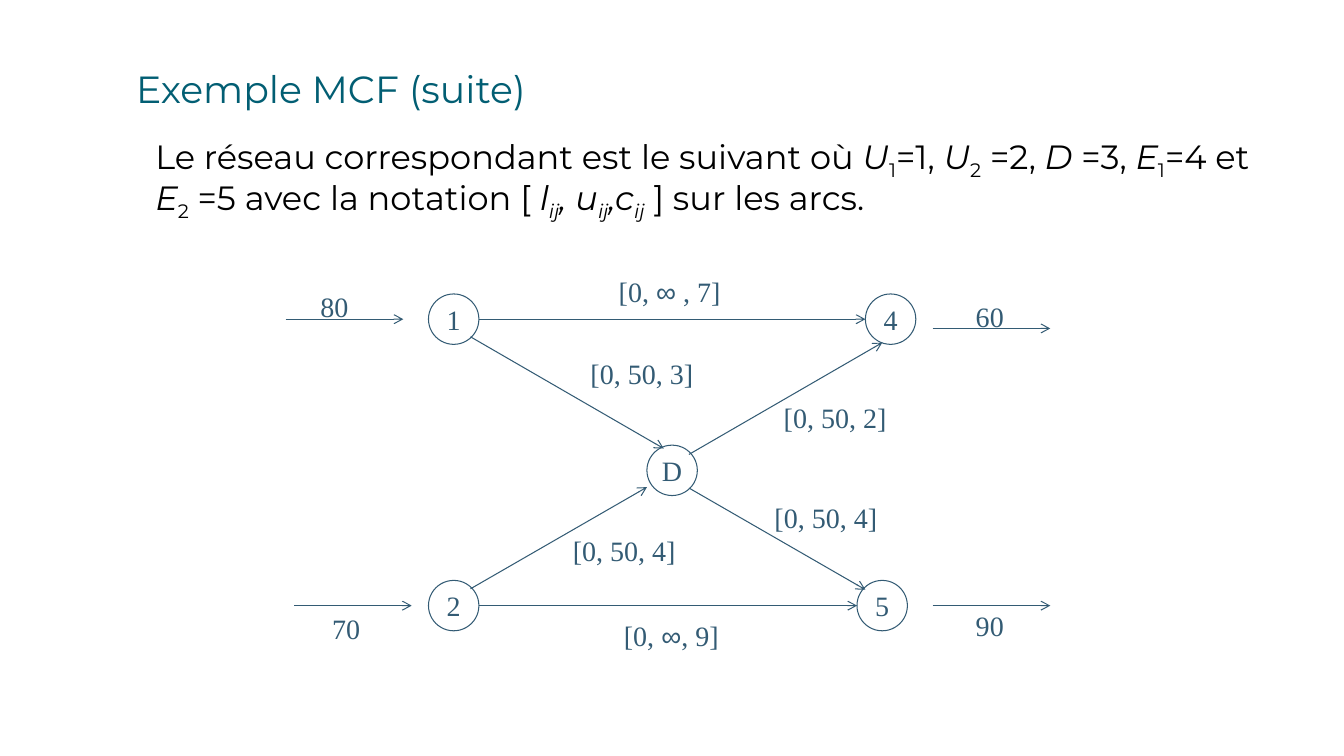
from lxml.etree import SubElement
from pptx import Presentation
from pptx.dml.color import RGBColor
from pptx.enum.shapes import MSO_CONNECTOR, MSO_SHAPE
from pptx.enum.text import MSO_ANCHOR, MSO_AUTO_SIZE, PP_ALIGN
from pptx.oxml.ns import qn
from pptx.util import Inches, Pt

TEAL = RGBColor(0x02, 0x5E, 0x73)
BLACK = RGBColor(0, 0, 0)
SLATE = RGBColor(0x33, 0x5B, 0x74)

# Content: "_" marks subscript, "i" marks italic
TITLE = "Exemple MCF (suite)"
SENTENCE = [
    ("Le réseau correspondant est le suivant où ", ""),
    ("U", "i"), ("1", "_"), ("=1, ", ""), ("U", "i"), ("2", "_"), (" =2, ", ""),
    ("D", "i"), (" =3, ", ""), ("E", "i"), ("1", "_"), ("=4 et ", ""),
    ("E", "i"), ("2", "_"), (" =5 avec la notation [ ", ""),
    ("l", "i"), ("ij", "i_"), (", u", "i"), ("ij", "i_"), (",c", "i"), ("ij", "i_"),
    (" ] sur les arcs.", ""),
]

# Network on a grid of twelfths of an inch: (column, row)
CELL = 1 / 12
RADIUS = 3
TOP, MIDDLE, BOTTOM = 38, 56, 72.1
NODES = {"1": (54, TOP), "4": (106, TOP), "D": (80, MIDDLE),
         "2": (54, BOTTOM), "5": (105, BOTTOM)}
LEVEL_ARCS = [("1", "4"), ("2", "5")]
SLANTED_ARCS = [
    ((56, 70.1), (77, 58)), ((82, 54.1), (105, 40.8)),
    ((56, 40.1), (79, 53.4)), ((82, 58.1), (103, 70.2)),
]
FLOW_LENGTH = 14
FLOWS = [(34, TOP), (35, BOTTOM), (111, 39.1), (111, BOTTOM)]
LABELS = [  # text, centre
    ("[0, ∞ , 7]", (79.7, 34.7)), ("[0, ∞, 9]", (79.9, 75.6)),
    ("[0, 50, 2]", (99.4, 49.7)), ("[0, 50, 4]", (98.3, 61.6)),
    ("[0, 50, 4]", (74.3, 65.5)), ("[0, 50, 3]", (76.4, 44.5)),
    ("80", (39.8, 36.5)), ("70", (41.2, 74.8)),
    ("60", (117.8, 37.6)), ("90", (117.8, 74.5)),
]
LABEL_HEIGHT, LABEL_WIDTH, FLOW_WIDTH = 0.44, 1.23, 0.48


def grid(value):
    return Inches(value * CELL)


def set_values(target, values):
    for name, value in values.items():
        setattr(target, name, value)


def add_run(paragraph, text, name, size, color, italic=None):
    run = paragraph.add_run()
    run.text = text
    set_values(run.font, {"name": name, "size": Pt(size), "italic": italic})
    run.font.color.rgb = color
    return run


def write_network_text(frame, text):
    margins = ("margin_left", "margin_right", "margin_top", "margin_bottom")
    set_values(frame, dict.fromkeys(margins, 0))
    set_values(frame, {"word_wrap": False, "vertical_anchor": MSO_ANCHOR.MIDDLE})
    paragraph = frame.paragraphs[0]
    paragraph.alignment = PP_ALIGN.CENTER
    before, infinity, after = text.partition("∞")
    for part, font in ((before, "Times New Roman"), (infinity, "Arial"),
                       (after, "Times New Roman")):
        if part:
            add_run(paragraph, part, font, 20, SLATE)


def add_arrow(slide, start, end):
    arrow = slide.shapes.add_connector(
        MSO_CONNECTOR.STRAIGHT, *(grid(value) for value in (*start, *end)))
    arrow.line.color.rgb = SLATE
    arrow.line.width = Pt(0.75)
    SubElement(arrow.line._get_or_add_ln(), qn("a:tailEnd"), type="arrow")
    SubElement(arrow._element.spPr, qn("a:effectLst"))


def place(placeholder, top, height):
    set_values(placeholder, {"left": Inches(1.25), "top": Inches(top),
                             "width": Inches(11.5), "height": Inches(height)})
    set_values(placeholder.text_frame, {
        "word_wrap": True, "auto_size": MSO_AUTO_SIZE.NONE,
        "vertical_anchor": MSO_ANCHOR.TOP})
    paragraph = placeholder.text_frame.paragraphs[0]
    set_values(paragraph, {"alignment": PP_ALIGN.LEFT, "line_spacing": 0.9,
                           "space_before": Pt(0)})
    return paragraph


def main():
    presentation = Presentation()
    set_values(presentation, {"slide_width": Inches(13.33), "slide_height": Inches(7.5)})
    slide = presentation.slides.add_slide(presentation.slide_layouts[1])

    # Title and sentence
    add_run(place(slide.shapes.title, 0.65, 0.75), TITLE, "Montserrat", 27, TEAL)
    body = slide.placeholders[1]
    paragraph = place(body, 1.25, 1.26)
    set_values(body.text_frame, {"margin_left": Inches(0.1), "margin_right": Inches(0.1),
                                 "margin_top": Inches(0.1)})
    properties = paragraph._p.get_or_add_pPr()
    properties.set("marL", str(Inches(0.19)))
    properties.set("indent", "0")
    SubElement(properties, qn("a:buNone"))
    for text, style in SENTENCE:
        run = add_run(paragraph, text, "Montserrat", 24, BLACK, "i" in style)
        if "_" in style:
            run.font._element.set("baseline", "-25000")

    # Nodes
    for name, (column, row) in NODES.items():
        node = slide.shapes.add_shape(
            MSO_SHAPE.OVAL, grid(column - RADIUS), grid(row - RADIUS),
            grid(2 * RADIUS), grid(2 * RADIUS))
        node.shadow.inherit = False
        node.fill.background()
        node.line.color.rgb = SLATE
        node.line.width = Pt(0.75)
        write_network_text(node.text_frame, name)

    # Arcs, then flows in and out
    for source, target in LEVEL_ARCS:
        (left, row), (right, _) = NODES[source], NODES[target]
        add_arrow(slide, (left + RADIUS, row), (right - RADIUS, row))
    for start, end in SLANTED_ARCS:
        add_arrow(slide, start, end)
    for column, row in FLOWS:
        add_arrow(slide, (column, row), (column + FLOW_LENGTH, row))

    # Arc and flow labels
    for text, (column, row) in LABELS:
        width = LABEL_WIDTH if text.startswith("[") else FLOW_WIDTH
        label = slide.shapes.add_textbox(
            grid(column) - Inches(width / 2), grid(row) - Inches(LABEL_HEIGHT / 2),
            Inches(width), Inches(LABEL_HEIGHT))
        write_network_text(label.text_frame, text)

    presentation.save("out.pptx")


if __name__ == "__main__":
    main()
